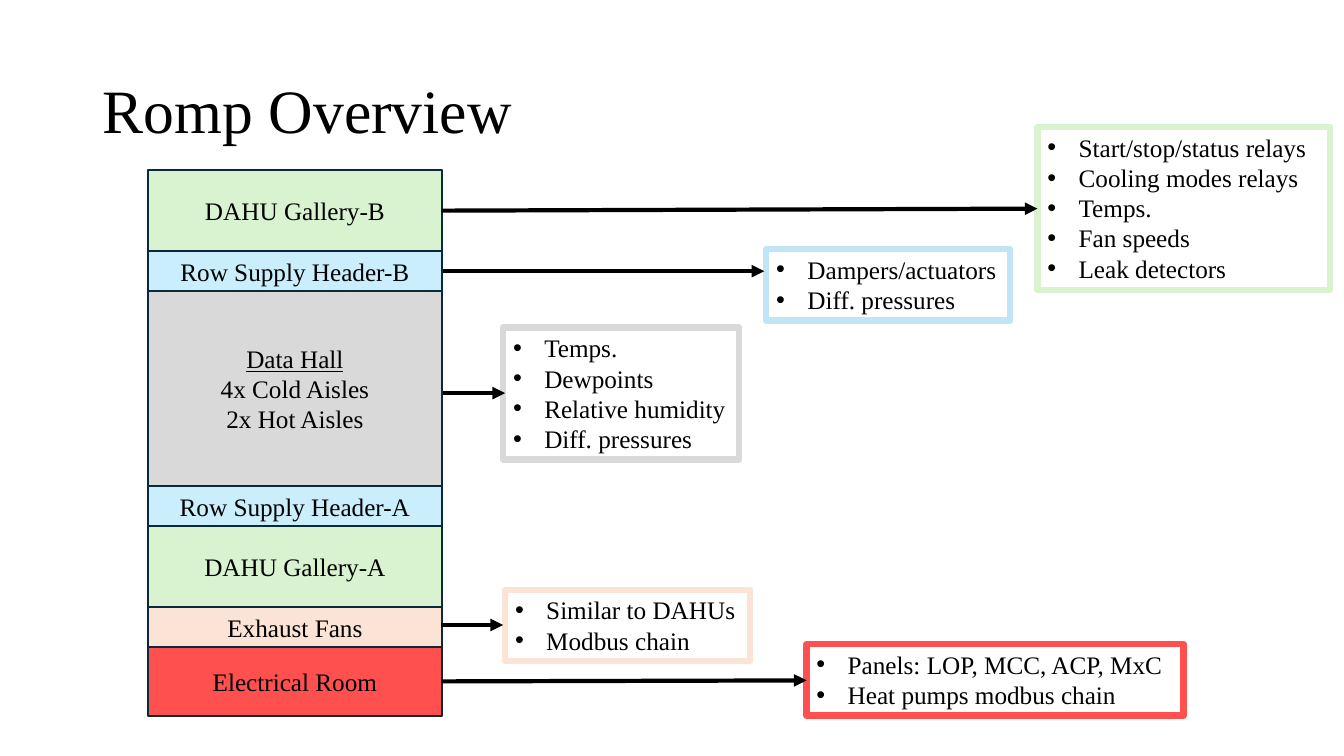
from dataclasses import dataclass

from lxml import etree
from pptx import Presentation
from pptx import util as u
from pptx.dml.color import RGBColor
from pptx.enum import shapes, text
from pptx.oxml import ns

BLACK = RGBColor(0x00, 0x00, 0x00)
NAVY = RGBColor(0x09, 0x2A, 0x39)
GREEN = RGBColor(0xD9, 0xF2, 0xD0)
SKY = RGBColor(0xCA, 0xEE, 0xFB)
BLUE = RGBColor(0xC1, 0xE5, 0xF5)
GREY = RGBColor(0xD9, 0xD9, 0xD9)
PEACH = RGBColor(0xFB, 0xE3, 0xD6)
RED = RGBColor(0xFF, 0x50, 0x50)

FONT = "Times New Roman"
STACK_LEFT, STACK_TOP, STACK_WIDTH = 1.47, 1.69, 2.91
BULLET_INDENT = u.Inches(0.31)


@dataclass
class Zone:
    lines: list[str]
    height: float
    fill: RGBColor
    underline_first: bool = False


@dataclass
class Note:
    items: list[str]
    left: float
    top: float
    width: float
    height: float
    color: RGBColor


@dataclass
class Arrow:
    x1: float
    y1: float
    x2: float
    y2: float


ZONES = [
    Zone(["DAHU Gallery-B"], 0.8, GREEN),
    Zone(["Row Supply Header-B"], 0.4, SKY),
    Zone(["Data Hall", "4x Cold Aisles", "2x Hot Aisles"], 1.93, GREY, True),
    Zone(["Row Supply Header-A"], 0.4, SKY),
    Zone(["DAHU Gallery-A"], 0.8, GREEN),
    Zone(["Exhaust Fans"], 0.4, PEACH),
    Zone(["Electrical Room"], 0.68, RED),
]

NOTES = [
    Note(["Start/stop/status relays", "Cooling modes relays", "Temps.",
          "Fan speeds", "Leak detectors"], 10.29, 1.26, 2.9, 1.62, GREEN),
    Note(["Dampers/actuators", "Diff. pressures"], 7.6, 2.47, 2.42, 0.71, BLUE),
    Note(["Temps.", "Dewpoints", "Relative humidity", "Diff. pressures"],
         4.99, 3.25, 2.34, 1.31, GREY),
    Note(["Similar to DAHUs", "Modbus chain"], 5.01, 5.85, 2.43, 0.71, PEACH),
    Note(["Panels: LOP, MCC, ACP, MxC", "Heat pumps modbus chain"],
         8, 6.39, 3.74, 0.71, RED),
]

ARROWS = [
    Arrow(4.38, 2.09, 10.29, 2.07),
    Arrow(4.39, 2.69, 7.58, 2.69),
    Arrow(4.39, 3.9, 5.01, 3.9),
    Arrow(4.37, 6.2, 4.99, 6.2),
    Arrow(4.38, 6.76, 8, 6.75),
]


def apply(target, values: dict) -> None:
    for name, value in values.items():
        setattr(target, name, value)


def write(frame, lines: list[str], align, size: int = 18) -> None:
    """Fill a text frame, one paragraph per line."""
    for index, line in enumerate(lines):
        para = frame.paragraphs[0] if index == 0 else frame.add_paragraph()
        para.alignment = align
        span = para.add_run()
        span.text = line
        apply(span.font, {"name": FONT, "size": u.Pt(size)})
        span.font.color.rgb = BLACK


def set_line(line, color: RGBColor, width: float) -> None:
    line.color.rgb = color
    line.width = u.Pt(width)


def add_title(page, title: str) -> None:
    box = page.shapes.title
    apply(box, {"left": u.Inches(0.92), "top": u.Inches(0.4),
                "width": u.Inches(11.5), "height": u.Inches(1.45)})
    apply(box.text_frame, {"vertical_anchor": text.MSO_ANCHOR.MIDDLE,
                           "auto_size": text.MSO_AUTO_SIZE.NONE,
                           "word_wrap": True})
    write(box.text_frame, [title], text.PP_ALIGN.LEFT, 44)
    box.text_frame.paragraphs[0].line_spacing = 0.9


def add_zone(page, zone: Zone, top: float) -> None:
    box = page.shapes.add_shape(
        shapes.MSO_SHAPE.RECTANGLE, u.Inches(STACK_LEFT), u.Inches(top),
        u.Inches(STACK_WIDTH), u.Inches(zone.height))
    box.shadow.inherit = False
    box.fill.solid()
    box.fill.fore_color.rgb = zone.fill
    set_line(box.line, NAVY, 1.5)
    apply(box.text_frame, {"vertical_anchor": text.MSO_ANCHOR.MIDDLE,
                           "word_wrap": True})
    write(box.text_frame, zone.lines, text.PP_ALIGN.CENTER)
    if zone.underline_first:
        box.text_frame.paragraphs[0].runs[0].font.underline = True


def add_note(page, note: Note) -> None:
    box = page.shapes.add_textbox(
        u.Inches(note.left), u.Inches(note.top),
        u.Inches(note.width), u.Inches(note.height))
    set_line(box.line, note.color, 4.5)
    apply(box.text_frame, {"vertical_anchor": text.MSO_ANCHOR.TOP,
                           "word_wrap": True,
                           "auto_size": text.MSO_AUTO_SIZE.SHAPE_TO_FIT_TEXT})
    write(box.text_frame, note.items, text.PP_ALIGN.LEFT)
    for para in box.text_frame.paragraphs:
        props = para._p.get_or_add_pPr()
        props.set("marL", str(BULLET_INDENT))
        props.set("indent", str(-BULLET_INDENT))
        etree.SubElement(props, ns.qn("a:buFont"), typeface="Arial")
        etree.SubElement(props, ns.qn("a:buChar"), char="•")


def add_arrow(page, arrow: Arrow) -> None:
    link = page.shapes.add_connector(
        shapes.MSO_CONNECTOR.STRAIGHT, u.Inches(arrow.x1), u.Inches(arrow.y1),
        u.Inches(arrow.x2), u.Inches(arrow.y2))
    set_line(link.line, BLACK, 3)
    etree.SubElement(link.line._get_or_add_ln(), ns.qn("a:tailEnd"), type="triangle")
    etree.SubElement(link._element.spPr, ns.qn("a:effectLst"))


def main() -> None:
    deck = Presentation()
    apply(deck, {"slide_width": u.Inches(13.33), "slide_height": u.Inches(7.5)})
    page = deck.slides.add_slide(deck.slide_layouts.get_by_name("Title Only"))
    add_title(page, "Romp Overview")

    # Building zones, stacked from the top
    top = STACK_TOP
    for zone in ZONES:
        add_zone(page, zone, top)
        top += zone.height

    # Monitored points beside the zones
    for note in NOTES:
        add_note(page, note)
    for arrow in ARROWS:
        add_arrow(page, arrow)

    deck.save("out.pptx")


if __name__ == "__main__":
    main()
